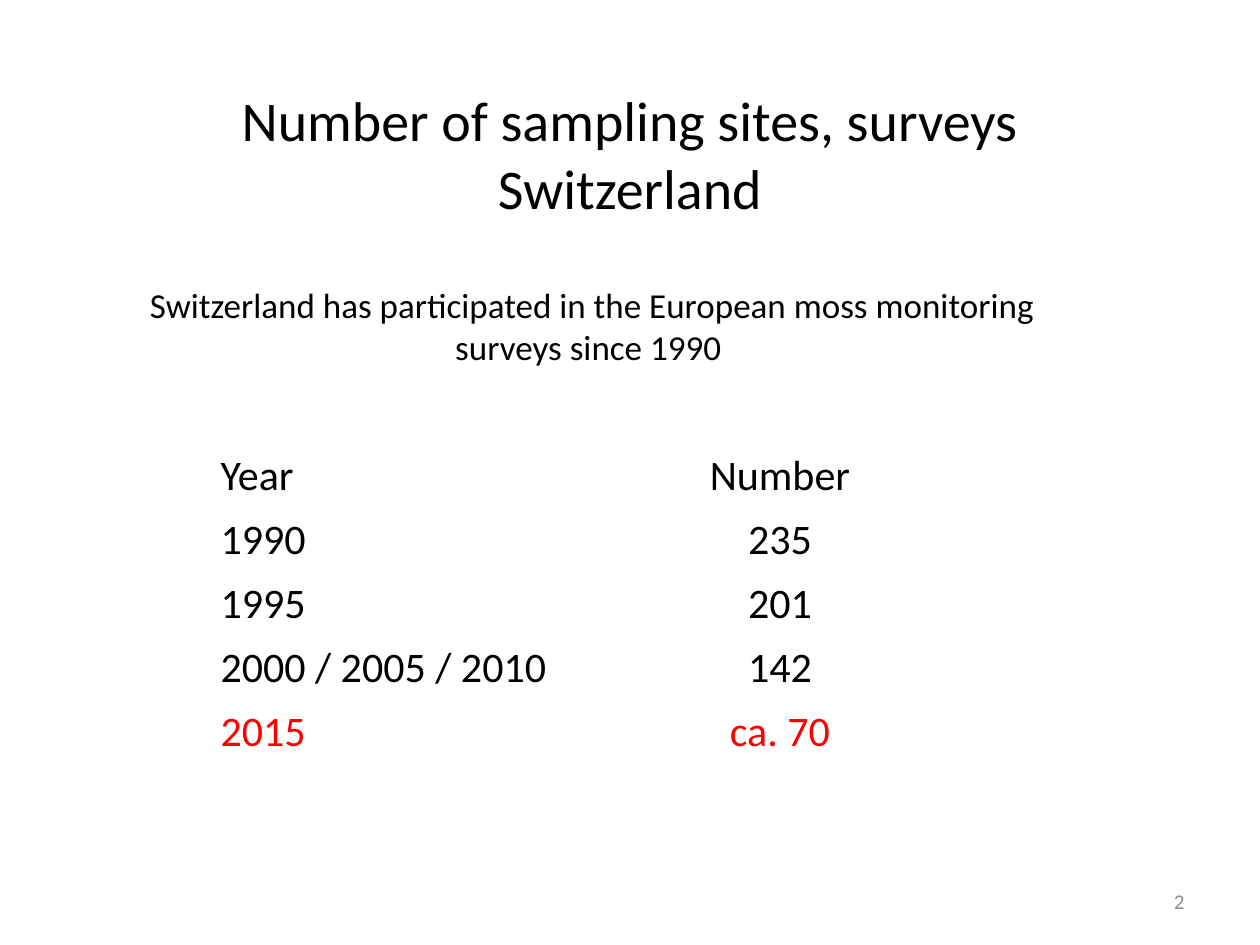
from dataclasses import dataclass

import pptx
import pptx.dml.color
import pptx.enum.text
import pptx.util

Inches = pptx.util.Inches
Align = pptx.enum.text.PP_ALIGN
Color = pptx.dml.color.RGBColor


@dataclass(frozen=True)
class Theme:
    font: str = "Calibri"
    text: Color = Color(0x00, 0x00, 0x00)
    highlight: Color = Color(0xFF, 0x00, 0x00)
    muted: Color = Color(0x8C, 0x8C, 0x8C)
    title_size: int = 32
    intro_size: int = 20
    table_size: int = 24
    number_size: int = 12


@dataclass(frozen=True)
class Survey:
    year: str
    sites: str
    highlighted: bool = False


THEME = Theme()
COLUMN_WIDTHS = (2.94, 3.2)
ROW_HEIGHT = 0.5
SURVEYS = (
    Survey("Year", "Number"),
    Survey("1990", "235"),
    Survey("1995", "201"),
    Survey("2000 / 2005 / 2010", "142"),
    Survey("2015", "ca. 70", highlighted=True),
)


def write(frame, text: str, size: int, color: Color, align: Align) -> None:
    """Fill a text frame with one formatted paragraph."""
    frame.text = text
    paragraph = frame.paragraphs[0]
    paragraph.alignment = align
    paragraph.space_before = pptx.util.Pt(0)
    font = paragraph.runs[0].font
    font.name = THEME.font
    font.size = pptx.util.Pt(size)
    font.color.rgb = color


def write_box(box, place: tuple[float, float, float, float], text: str,
              size: int, color: Color, align: Align) -> None:
    """Place a box and write its vertically centred text."""
    box.left, box.top, box.width, box.height = map(Inches, place)
    frame = box.text_frame
    frame.word_wrap = True
    frame.auto_size = pptx.enum.text.MSO_AUTO_SIZE.NONE
    frame.vertical_anchor = pptx.enum.text.MSO_ANCHOR.MIDDLE
    write(frame, text, size, color, align)


def add_survey_table(slide, left: float, top: float) -> None:
    """Add the plain table of sites per survey year."""
    table = slide.shapes.add_table(
        len(SURVEYS), len(COLUMN_WIDTHS), Inches(left), Inches(top),
        Inches(sum(COLUMN_WIDTHS)), Inches(ROW_HEIGHT * len(SURVEYS))).table
    table.first_row = False
    table.horz_banding = False
    for column, width in zip(table.columns, COLUMN_WIDTHS):
        column.width = Inches(width)
    for row, survey in zip(table.rows, SURVEYS):
        color = THEME.highlight if survey.highlighted else THEME.text
        entries = ((survey.year, Align.LEFT), (survey.sites, Align.CENTER))
        for cell, (text, align) in zip(row.cells, entries):
            cell.fill.background()
            write(cell.text_frame, text, THEME.table_size, color, align)


def main() -> None:
    deck = pptx.Presentation()
    deck.slide_width, deck.slide_height = Inches(10), Inches(7.5)
    slide = deck.slides.add_slide(deck.slide_layouts[0])

    # Title and introduction
    write_box(slide.shapes.title, (0.75, 0.83, 8.5, 0.77),
              "Number of sampling sites, surveys Switzerland",
              THEME.title_size, THEME.text, Align.CENTER)
    write_box(slide.placeholders[1], (0.75, 2.05, 7.9, 1.07),
              "Switzerland has participated in the European moss monitoring "
              "surveys since 1990 ",
              THEME.intro_size, THEME.text, Align.CENTER)

    # Sites per survey year
    add_survey_table(slide, 1.65, 3.53)

    # Slide number
    number = slide.shapes.add_textbox(0, 0, 0, 0)
    write_box(number, (7.17, 6.95, 2.33, 0.4), "2",
              THEME.number_size, THEME.muted, Align.RIGHT)

    deck.save("out.pptx")


if __name__ == "__main__":
    main()
